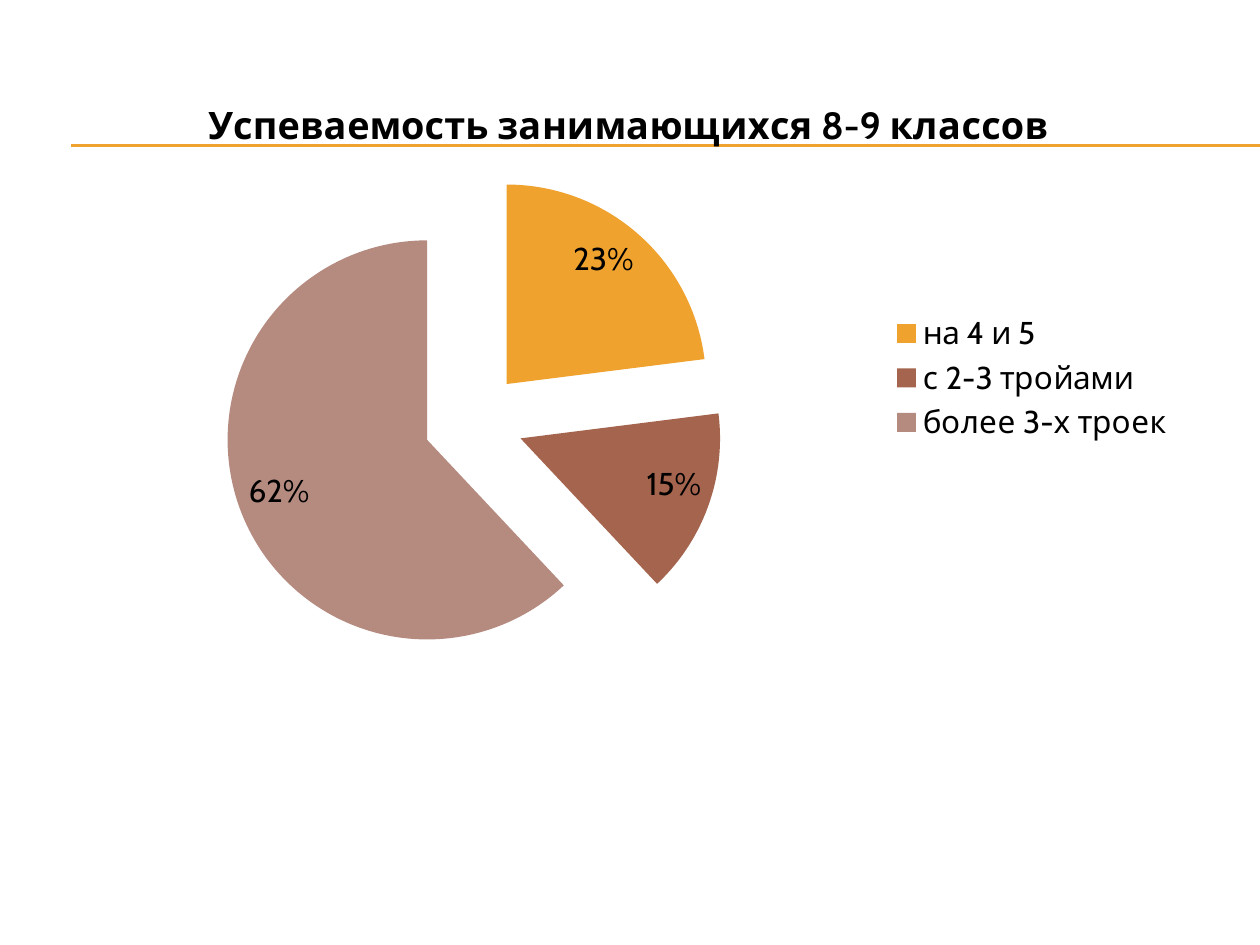
from lxml import etree
from pptx import Presentation
from pptx.chart.data import CategoryChartData
from pptx.dml.color import RGBColor
from pptx.enum.chart import XL_CHART_TYPE, XL_LABEL_POSITION, XL_LEGEND_POSITION
from pptx.enum.shapes import MSO_CONNECTOR
from pptx.oxml import parse_xml
from pptx.oxml.ns import nsdecls, qn
from pptx.util import Pt

PX = 914400 // 126
SLIDE = (1260, 945)
FONT = "Cabin"
BLACK, ORANGE = "000000", "F0A22E"

TITLE = "Успеваемость занимающихся 8-9 классов"
GRADES = [
    ("на 4 и 5", 23, ORANGE),
    ("с 2-3 тройами", 15, "A5644E"),
    ("более 3-х троек", 62, "B58B80"),
]
RULE_TOPS = (145, 146)
RULE_LEFT = 71
CHART_BOX = (54, 66, 1134, 624)
PIE_BOX = (221, 172, 500, 500)
TITLE_CORNER = (201, 92)
EXPLOSION = 25


def px(*lengths):
    return [length * PX for length in lengths]


def rgb(color):
    return RGBColor.from_string(color)


def style(font, size, bold=False):
    for key, value in {"name": FONT, "size": Pt(size), "bold": bold}.items():
        setattr(font, key, value)
    font.color.rgb = rgb(BLACK)


def layout(corner, size=()):
    """Manual chart layout, with slide px turned into fractions of the chart."""
    left, top, width, height = CHART_BOX
    x, y = corner
    parts = [("xMode", "edge"), ("yMode", "edge"),
             ("x", round((x - left) / width, 2)), ("y", round((y - top) / height, 2))]
    if size:
        parts.insert(0, ("layoutTarget", "inner"))
        parts += [("w", round(size[0] / width, 2)), ("h", round(size[1] / height, 2))]
    inner = "".join(f'<c:{tag} val="{value}"/>' for tag, value in parts)
    return parse_xml(f'<c:layout {nsdecls("c")}><c:manualLayout>{inner}'
                     '</c:manualLayout></c:layout>')


def place(element, new_layout, index):
    for old in element.findall(qn("c:layout")):
        element.remove(old)
    element.insert(index, new_layout)


def add_rule(slide, top):
    rule = slide.shapes.add_connector(
        MSO_CONNECTOR.STRAIGHT, *px(RULE_LEFT, top, SLIDE[0], top))
    rule.line.color.rgb = rgb(ORANGE)
    rule.line.width = Pt(0.75)
    etree.SubElement(rule._element.spPr, qn("a:effectLst"))


def add_pie(slide):
    data = CategoryChartData()
    data.categories = [name for name, _, _ in GRADES]
    data.add_series(TITLE, [share for _, share, _ in GRADES])
    chart = slide.shapes.add_chart(XL_CHART_TYPE.PIE, *px(*CHART_BOX), data).chart
    style(chart.font, 18)

    chart.has_title = True
    heading = chart.chart_title.text_frame
    heading.text = TITLE
    style(heading.paragraphs[0].runs[0].font, 21.6, bold=True)
    place(chart.chart_title._element, layout(TITLE_CORNER), 1)

    chart.has_legend = True
    chart.legend.position = XL_LEGEND_POSITION.RIGHT
    chart.legend.include_in_layout = False
    style(chart.legend.font, 18)

    plot = chart.plots[0]
    plot.vary_by_categories = True
    place(plot._element.getparent(), layout(PIE_BOX[:2], PIE_BOX[2:]), 0)
    plot.has_data_labels = True
    labels = plot.data_labels
    for key, value in {"show_percentage": True, "show_value": False,
                       "number_format": "0%", "number_format_is_linked": False,
                       "position": XL_LABEL_POSITION.INSIDE_END}.items():
        setattr(labels, key, value)
    style(labels.font, 18)

    series = plot.series[0]
    explosion = parse_xml(f'<c:explosion {nsdecls("c")} val="{EXPLOSION}"/>')
    series._element.find(qn("c:tx")).addnext(explosion)
    for index, (_, _, color) in enumerate(GRADES):
        fill = series.points[index].format.fill
        fill.solid()
        fill.fore_color.rgb = rgb(color)


def main():
    presentation = Presentation()
    presentation.slide_width, presentation.slide_height = px(*SLIDE)
    slide = presentation.slides.add_slide(presentation.slide_layouts[6])
    for top in RULE_TOPS:
        add_rule(slide, top)
    add_pie(slide)
    presentation.save("out.pptx")


if __name__ == "__main__":
    main()
